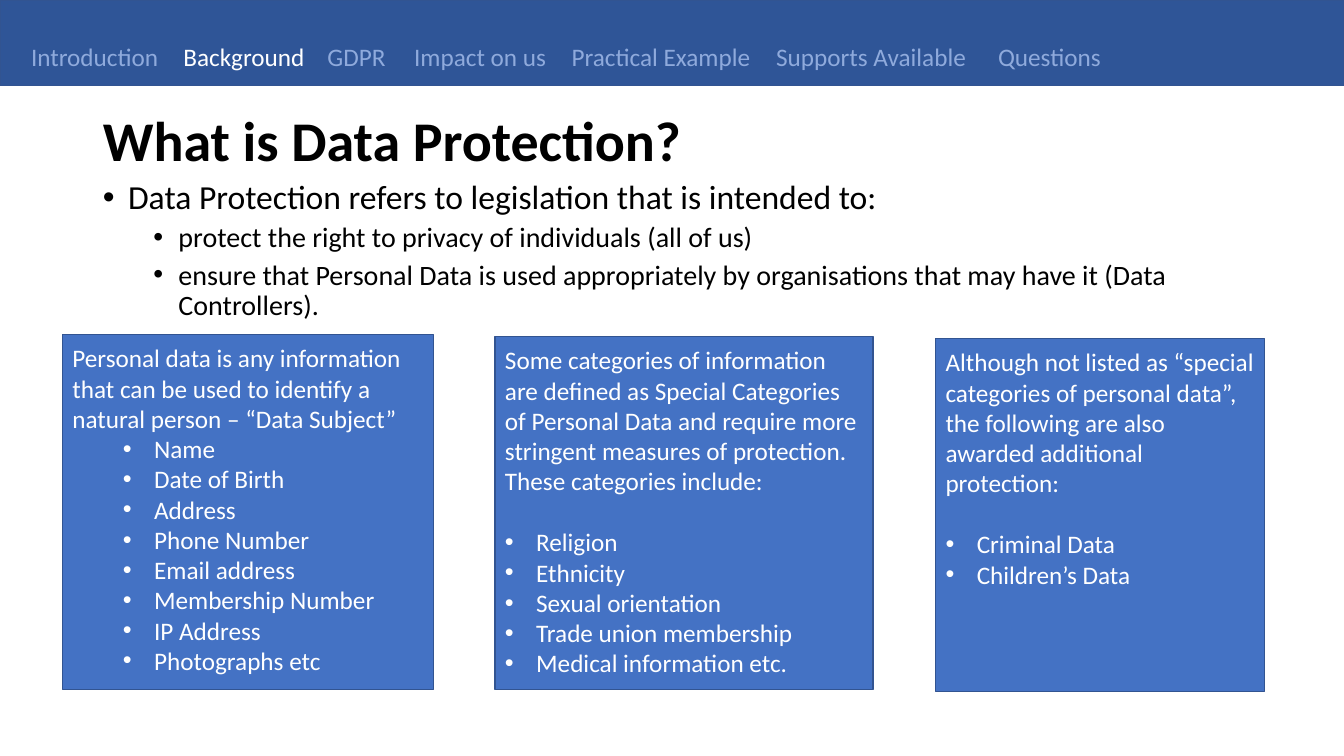
from dataclasses import dataclass

from lxml.etree import SubElement
from pptx import Presentation
from pptx.dml.color import RGBColor
from pptx.enum.shapes import MSO_SHAPE as Preset
from pptx.enum.text import MSO_ANCHOR as Anchor, MSO_AUTO_SIZE as AutoSize, PP_ALIGN as Align
from pptx.oxml.ns import qn
from pptx.shapes.autoshape import Shape
from pptx.slide import Slide
from pptx.text.text import _Paragraph as Paragraph
from pptx.util import Inches, Pt

FONT = "Calibri"
COLORS = {
    "banner": "2F5597",
    "panel": "4472C4",
    "outline": "325491",
    "muted": "8FAADC",
    "white": "FFFFFF",
    "black": "000000",
}


@dataclass
class Section:
    label: str
    left: float
    width: float
    color: str = "muted"


@dataclass
class Panel:
    left: float
    top: float
    width: float
    height: float
    intro: str
    items: list[str]
    indent: float = 0.31
    level: int = 0
    gap: float = 22


@dataclass
class Point:
    text: str
    size: float
    level: int
    indent: float
    space: float


SECTIONS = [
    Section("Introduction", 0.21, 1.5),
    Section("Background", 1.72, 1.42, "white"),
    Section("GDPR", 3.15, 0.84),
    Section("Impact on us", 4.01, 1.54),
    Section("Practical Example", 5.57, 2.02),
    Section("Supports Available", 7.6, 2.18),
    Section("Questions", 9.8, 1.25),
]

POINTS = [
    Point("Data Protection refers to legislation that is intended to:", 24, 0, 0.25, 0),
    Point("protect the right to privacy of individuals (all of us)", 20, 1, 0.75, 5),
    Point("ensure that Personal Data is used appropriately by organisations "
          "that may have it (Data Controllers).", 20, 1, 0.75, 5),
]

PANELS = [
    Panel(0.62, 3.32, 3.68, 3.52,
          "Personal data is any information that can be used to identify "
          "a natural person – “Data Subject”",
          ["Name", "Date of Birth", "Address", "Phone Number", "Email address",
           "Membership Number", "IP Address", "Photographs etc"],
          indent=0.81, level=1, gap=0),
    Panel(4.91, 3.34, 3.75, 3.5,
          "Some categories of information are defined as Special Categories of "
          "Personal Data and require more stringent measures of protection. "
          "These categories include:",
          ["Religion", "Ethnicity", "Sexual orientation", "Trade union membership",
           "Medical information etc."]),
    Panel(9.28, 3.36, 3.26, 3.5,
          "Although not listed as “special categories of personal data”, "
          "the following are also awarded additional protection:",
          ["Criminal Data", "Children’s Data"]),
]


def rgb(color: str) -> RGBColor:
    return RGBColor.from_string(COLORS[color])


def write(paragraph: Paragraph, text: str, size: float, color: str, bold: bool = False) -> None:
    paragraph.text = text
    paragraph.alignment = Align.LEFT
    font = paragraph.font
    font.name, font.size, font.bold = FONT, Pt(size), bold
    font.color.rgb = rgb(color)


def add_bullet(paragraph: Paragraph, indent: float, hanging: float) -> None:
    properties = paragraph._p.get_or_add_pPr()
    properties.set("marL", str(Inches(indent)))
    properties.set("indent", str(-Inches(hanging)))
    SubElement(properties, qn("a:buFont")).set("typeface", "Arial")
    SubElement(properties, qn("a:buChar")).set("char", "•")


def place(shape: Shape, left: float, top: float, width: float, height: float) -> None:
    shape.left, shape.top = Inches(left), Inches(top)
    shape.width, shape.height = Inches(width), Inches(height)


def add_block(slide: Slide, left: float, top: float, width: float, height: float,
              fill: str) -> Shape:
    block = slide.shapes.add_shape(
        Preset.RECTANGLE, Inches(left), Inches(top), Inches(width), Inches(height))
    block.shadow.inherit = False
    block.fill.solid()
    block.fill.fore_color.rgb = rgb(fill)
    block.line.color.rgb = rgb("outline")
    block.line.width = Pt(1)
    return block


def add_section(slide: Slide, section: Section) -> None:
    label = slide.shapes.add_textbox(
        Inches(section.left), Inches(0.36), Inches(section.width), Inches(0.4))
    label.text_frame.word_wrap = False
    write(label.text_frame.paragraphs[0], section.label, 18, section.color)


def add_panel(slide: Slide, panel: Panel) -> None:
    frame = add_block(
        slide, panel.left, panel.top, panel.width, panel.height, "panel").text_frame
    frame.word_wrap = True
    frame.vertical_anchor = Anchor.TOP
    frame.margin_top = Inches(0.08)
    write(frame.paragraphs[0], panel.intro, 18, "white")
    for index, item in enumerate(panel.items):
        paragraph = frame.add_paragraph()
        paragraph.level = panel.level
        paragraph.space_before = Pt(0 if index else panel.gap)
        add_bullet(paragraph, panel.indent, 0.31)
        write(paragraph, item, 18, "white")


def fill_title(title: Shape) -> None:
    place(title, 0.92, 1, 11.5, 0.85)
    frame = title.text_frame
    frame.auto_size = AutoSize.NONE
    frame.vertical_anchor = Anchor.MIDDLE
    write(frame.paragraphs[0], "What is Data Protection?", 40, "black", bold=True)
    frame.paragraphs[0].line_spacing = 0.9


def fill_body(body: Shape) -> None:
    place(body, 0.92, 1.74, 11.62, 4.76)
    frame = body.text_frame
    frame.auto_size = AutoSize.NONE
    for index, point in enumerate(POINTS):
        paragraph = frame.add_paragraph() if index else frame.paragraphs[0]
        paragraph.level = point.level
        paragraph.line_spacing = 0.9
        paragraph.space_before = Pt(point.space)
        add_bullet(paragraph, point.indent, 0.25)
        write(paragraph, point.text, point.size, "black")


def main() -> None:
    deck = Presentation()
    deck.slide_width, deck.slide_height = Inches(13.33), Inches(7.5)
    slide = deck.slides.add_slide(deck.slide_layouts[1])
    add_block(slide, 0, 0, 13.33, 0.85, "banner")
    fill_title(slide.shapes.title)
    fill_body(slide.placeholders[1])
    for section in SECTIONS:
        add_section(slide, section)
    for panel in PANELS:
        add_panel(slide, panel)
    deck.save("out.pptx")


if __name__ == "__main__":
    main()
